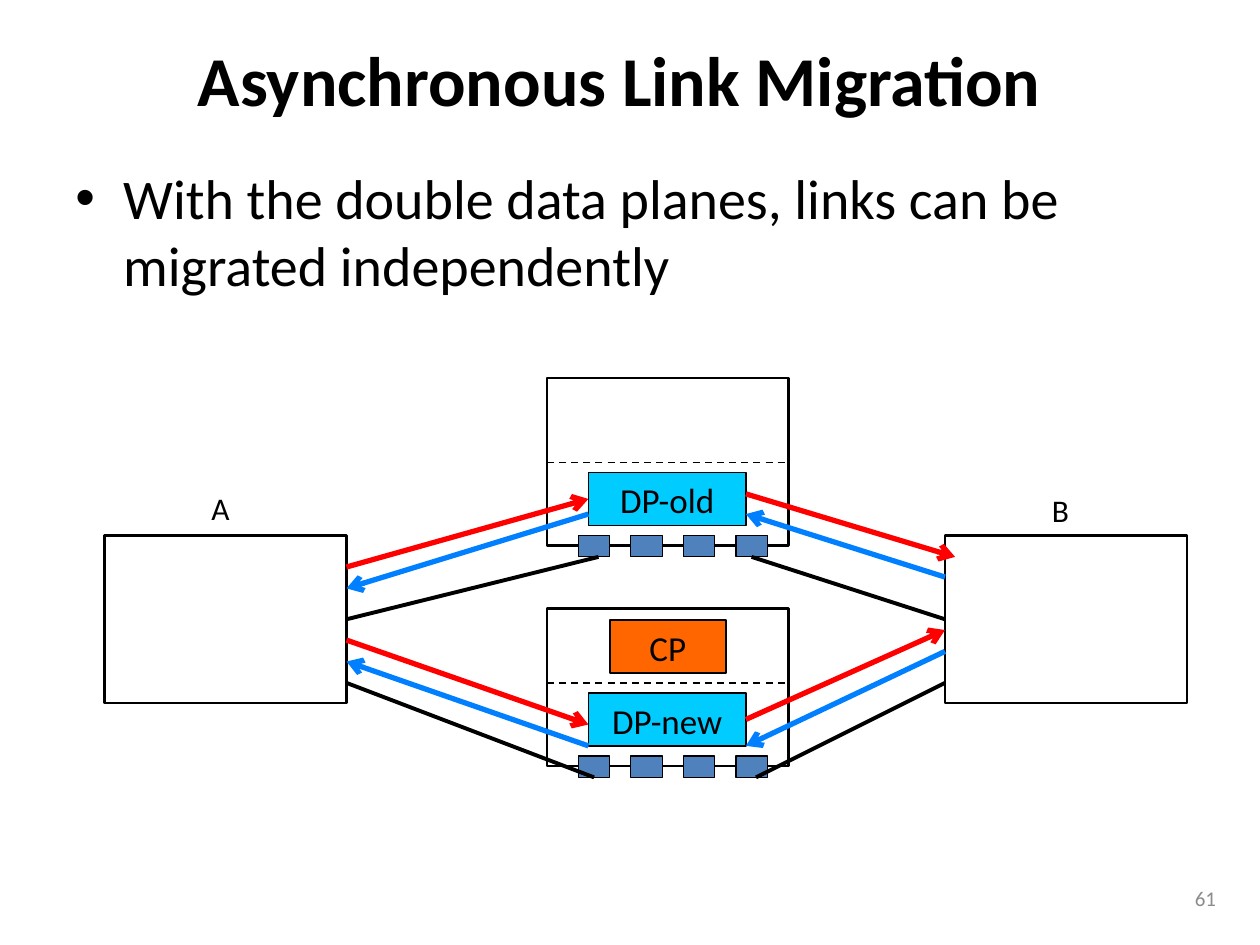
import pptx
import pptx.util
import pptx.dml.color
import pptx.enum.text
import pptx.enum.shapes
import pptx.enum.dml
import pptx.oxml.ns
import lxml.etree

Inches = pptx.util.Inches
Pt = pptx.util.Pt
ALIGN = pptx.enum.text.PP_ALIGN
ANCHOR = pptx.enum.text.MSO_ANCHOR
FONT = "Calibri"
COLORS = {
    "black": "000000",
    "grey": "8C8C8C",
    "orange": "FF6600",
    "port": "4F81BD",
    "cyan": "00CCFF",
    "red": "FF0000",
    "blue": "0080FF",
}
TOP, LEFT, BOTTOM, RIGHT = range(4)


def color(name):
    return pptx.dml.color.RGBColor.from_string(COLORS[name])


def child(node, tag, **attrs):
    return lxml.etree.SubElement(node, pptx.oxml.ns.qn(tag), attrs)


def write(frame, text, size=20, ink="black", bold=False, align=ALIGN.LEFT,
          anchor=ANCHOR.TOP, wrap=True):
    frame.word_wrap = wrap
    frame.vertical_anchor = anchor
    para = frame.paragraphs[0]
    para.alignment = align
    run = para.add_run()
    run.text = text
    run.font.name = FONT
    run.font.size = Pt(size)
    run.font.bold = bold
    run.font.color.rgb = color(ink)
    return para


def label(slide, text, x, y, w, h, **form):
    box = slide.shapes.add_textbox(Inches(x), Inches(y), Inches(w), Inches(h))
    return write(box.text_frame, text, **form)


def bullet(para, indent):
    para.space_before = Pt(6.4)
    props = para._p.get_or_add_pPr()
    props.set("marL", str(Inches(indent)))
    props.set("indent", str(-Inches(indent)))
    child(props, "a:buFont", typeface="Arial")
    child(props, "a:buChar", char="•")


def block(slide, x, y, w, h, fill=None, width=1, text=None):
    rect = slide.shapes.add_shape(
        pptx.enum.shapes.MSO_SHAPE.RECTANGLE,
        Inches(x), Inches(y), Inches(w), Inches(h))
    rect.shadow.inherit = False
    if fill:
        rect.fill.solid()
        rect.fill.fore_color.rgb = color(fill)
    else:
        rect.fill.background()
    rect.line.color.rgb = color("black")
    rect.line.width = Pt(width)
    if text:
        write(rect.text_frame, text, align=ALIGN.CENTER)
    return rect


def link(slide, start, end, ink="black", width=2.25, arrow=False, dash=False,
         tie=None, join=None):
    line = slide.shapes.add_connector(
        pptx.enum.shapes.MSO_CONNECTOR.STRAIGHT,
        Inches(start[0]), Inches(start[1]), Inches(end[0]), Inches(end[1]))
    line.line.color.rgb = color(ink)
    line.line.width = Pt(width)
    if dash:
        line.line.dash_style = pptx.enum.dml.MSO_LINE.DASH
    if arrow:
        child(line.line._get_or_add_ln(), "a:tailEnd", type="arrow")
    child(line._element.spPr, "a:effectLst")
    if tie:
        line.begin_connect(*tie)
    if join:
        line.end_connect(*join)


def router(slide, y, h, split, name):
    block(slide, 4.34, y, 1.92, h, width=1.5)
    link(slide, (4.34, split), (6.26, split), width=1, dash=True)
    plane = block(slide, 4.67, split + 0.08, 1.25, 0.42, "cyan", text=name)
    ports = [block(slide, 4.59 + i * 1.25 / 3, split + 0.58, 0.25, 0.17,
                   "port", 0.75) for i in range(4)]
    return plane, ports


def host(slide, x, name, left, top):
    label(slide, name, left, top, 0.37, 0.4, size=18, wrap=False)
    return block(slide, x, 4.25, 1.92, 1.33, width=1.5)


def main():
    deck = pptx.Presentation()
    deck.slide_width, deck.slide_height = Inches(10), Inches(7.5)
    slide = deck.slides.add_slide(deck.slide_layouts[6])

    label(slide, "Asynchronous Link Migration", 0.25, 0.25, 9.33, 0.75,
          size=40, bold=True, align=ALIGN.CENTER, anchor=ANCHOR.MIDDLE)
    body = label(
        slide,
        "With the double data planes, links can be migrated independently",
        0.5, 1.25, 9, 4.95, size=32)
    bullet(body, 0.38)
    label(slide, "61", 7.42, 6.93, 2.33, 0.4, size=12, ink="grey",
          align=ALIGN.RIGHT, anchor=ANCHOR.MIDDLE)

    old, upper = router(slide, 3, 1.33, 3.67, "DP-old")
    new, lower = router(slide, 4.83, 1.25, 5.42, "DP-new")
    block(slide, 4.84, 4.92, 0.92, 0.42, "orange", text="CP")
    left = host(slide, 0.83, "A", 1.58, 3.83)
    right = host(slide, 7.5, "B", 8.25, 3.85)

    flows = [
        ((2.75, 4.5), (4.67, 3.96), "red", None, (old, LEFT)),
        ((5.92, 3.92), (7.58, 4.42), "red", None, None),
        ((4.67, 4.08), (2.75, 4.67), "blue", None, None),
        ((7.5, 4.58), (5.92, 4.08), "blue", None, None),
        ((2.75, 5.08), (4.67, 5.75), "red", None, None),
        ((5.92, 5.71), (7.5, 5), "red", (new, RIGHT), None),
        ((7.5, 5.17), (5.92, 5.92), "blue", None, None),
        ((4.67, 5.92), (2.75, 5.25), "blue", None, None),
    ]
    for start, end, ink, tie, join in flows:
        link(slide, start, end, ink, 3, arrow=True, tie=tie, join=join)

    wires = [
        ((2.75, 4.92), (4.75, 4.42), (left, RIGHT), None),
        ((5.97, 4.42), (7.5, 4.92), (upper[3], BOTTOM), (right, LEFT)),
        ((2.75, 5.42), (4.72, 6.17), None, (lower[0], BOTTOM)),
        ((6, 6.17), (7.5, 5.42), None, None),
    ]
    for start, end, tie, join in wires:
        link(slide, start, end, tie=tie, join=join)

    deck.save("out.pptx")


if __name__ == "__main__":
    main()
